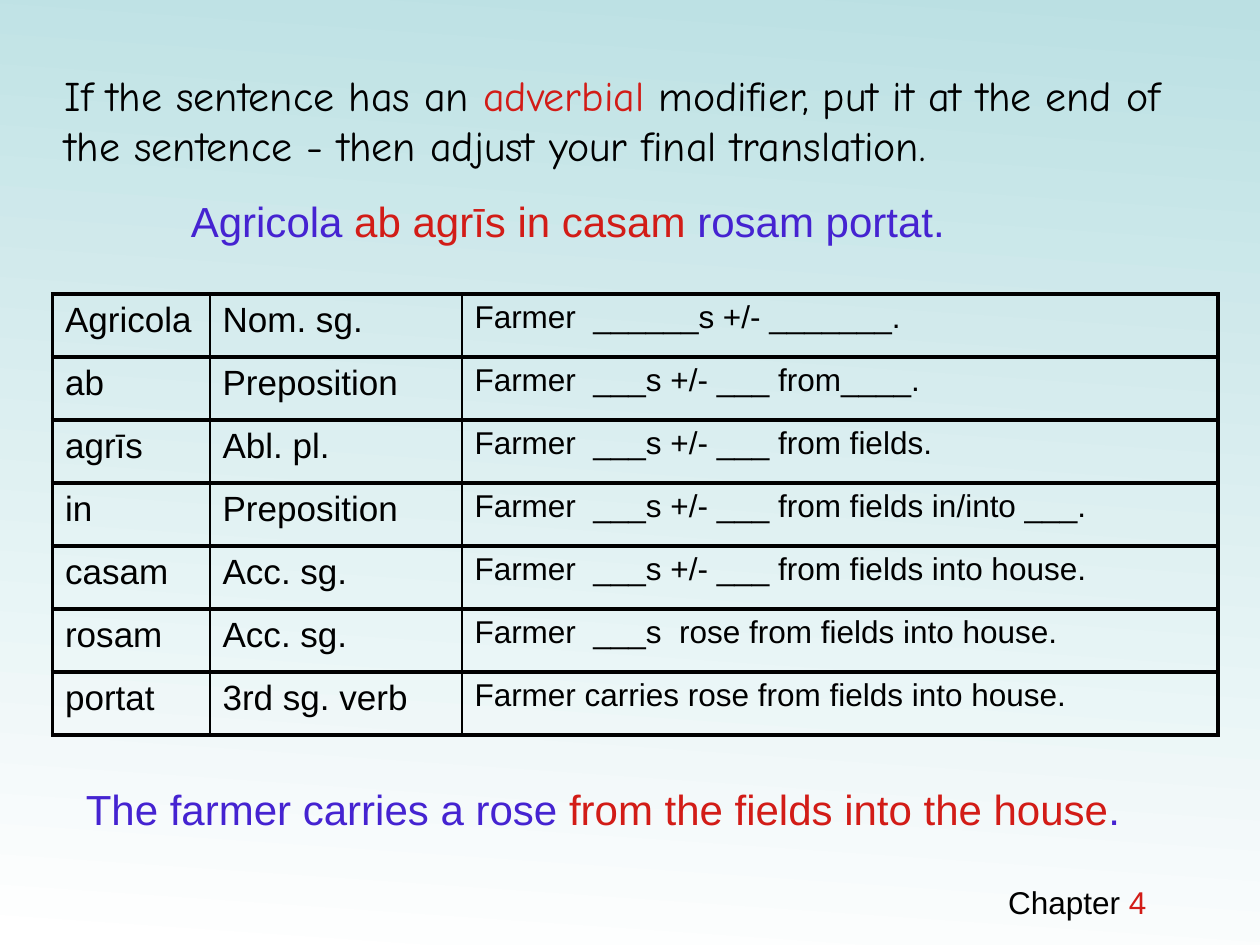
from dataclasses import dataclass

from lxml import etree
from pptx import Presentation
from pptx.dml.color import RGBColor
from pptx.enum.text import MSO_AUTO_SIZE
from pptx.oxml.ns import qn
from pptx.util import Pt

GROW = MSO_AUTO_SIZE.SHAPE_TO_FIT_TEXT


@dataclass(frozen=True)
class Theme:
    black: str = "000000"
    red: str = "D21C17"
    blue: str = "4523D1"
    sky: str = "BBE0E3"
    white: str = "FFFFFF"
    body_font: str = "Arial"
    rule_font: str = "Comic Neue"
    sentence_size: float = 24
    word_size: float = 20
    small_size: float = 18
    thick: float = 2.25
    thin: float = 1


@dataclass(frozen=True)
class TextBox:
    left: float
    top: float
    width: float
    height: float
    phrases: tuple[tuple[str, str], ...]
    size: float
    font: str
    wrap: bool = True


@dataclass(frozen=True)
class ParsedWord:
    latin: str
    grammar: str
    translation: str


THEME = Theme()
TABLE_LEFT, TABLE_TOP, ROW_HEIGHT = 30, 168, 36
COLUMN_WIDTHS = (90, 144, 432)
COLUMN_SIZES = (THEME.word_size, THEME.word_size, THEME.small_size)

TEXT_BOXES = (
    TextBox(30, 36, 654, 74, (
        ("If the sentence has an ", THEME.black),
        ("adverbial", THEME.red),
        (" modifier, put it at the end of the sentence - then adjust your "
         "final translation.", THEME.black),
    ), THEME.sentence_size, THEME.rule_font),
    TextBox(102, 108, 454, 36, (
        ("Agricola ", THEME.blue),
        ("ab agrīs in casam", THEME.red),
        (" rosam portat.", THEME.blue),
    ), THEME.sentence_size, THEME.body_font),
    TextBox(42, 444, 648, 36, (
        ("The farmer carries a rose ", THEME.blue),
        ("from the fields into the house", THEME.red),
        (".", THEME.blue),
    ), THEME.sentence_size, THEME.body_font),
    TextBox(569, 501, 93.6, 29, (
        ("Chapter ", THEME.black),
        ("4", THEME.red),
    ), THEME.small_size, THEME.body_font, wrap=False),
)

WORDS = (
    ParsedWord("Agricola", "Nom. sg.", "Farmer  ______s +/- _______."),
    ParsedWord("ab", "Preposition", "Farmer  ___s +/- ___ from____."),
    ParsedWord("agrīs", "Abl. pl.", "Farmer  ___s +/- ___ from fields."),
    ParsedWord("in", "Preposition", "Farmer  ___s +/- ___ from fields in/into ___."),
    ParsedWord("casam", "Acc. sg.", "Farmer  ___s +/- ___ from fields into house."),
    ParsedWord("rosam", "Acc. sg.", "Farmer  ___s  rose from fields into house."),
    ParsedWord("portat", "3rd sg. verb", "Farmer carries rose from fields into house."),
)


def style_run(r, size: float, color: str, font: str) -> None:
    r.font.size = Pt(size)
    r.font.name = font
    r.font.color.rgb = RGBColor.from_string(color)


def paint_background(s) -> None:
    fill = s.background.fill
    fill.gradient()
    fill.gradient_angle = 86
    for stop, color in zip(fill.gradient_stops, (THEME.white, THEME.sky)):
        stop.color.rgb = RGBColor.from_string(color)


def add_text_box(s, box: TextBox) -> None:
    sp = s.shapes.add_textbox(Pt(box.left), Pt(box.top), Pt(box.width), Pt(box.height))
    tf = sp.text_frame
    tf.word_wrap = box.wrap
    tf.auto_size = GROW
    for text, color in box.phrases:
        r = tf.paragraphs[0].add_run()
        r.text = text
        style_run(r, box.size, color, box.font)


def set_borders(cell, left: float, right: float) -> None:
    """Draw all four edges; the top and bottom are always thick."""
    edges = {"a:lnL": left, "a:lnR": right, "a:lnT": THEME.thick, "a:lnB": THEME.thick}
    tc_pr = cell._tc.get_or_add_tcPr()
    for tag, width in edges.items():
        ln = etree.SubElement(tc_pr, qn(tag), w=str(Pt(width)))
        fill = etree.SubElement(ln, qn("a:solidFill"))
        etree.SubElement(fill, qn("a:srgbClr"), val=THEME.black)


def set_relative_space_before(p, percent: int) -> None:
    spacing = etree.SubElement(p._p.get_or_add_pPr(), qn("a:spcBef"))
    etree.SubElement(spacing, qn("a:spcPct"), val=str(percent * 1000))


def add_word_table(s, word: ParsedWord, top: float) -> None:
    """Add a one-row table, so that each word can be shown on its own."""
    table = s.shapes.add_table(1, len(COLUMN_WIDTHS), Pt(TABLE_LEFT), Pt(top),
                               Pt(sum(COLUMN_WIDTHS)), Pt(ROW_HEIGHT)).table
    table.first_row = False
    table.horz_banding = False
    last = len(COLUMN_WIDTHS) - 1
    texts = (word.latin, word.grammar, word.translation)
    for i, (text, width, size) in enumerate(zip(texts, COLUMN_WIDTHS, COLUMN_SIZES)):
        table.columns[i].width = Pt(width)
        cell = table.cell(0, i)
        set_borders(cell, THEME.thick if i == 0 else THEME.thin,
                    THEME.thick if i == last else THEME.thin)
        cell.fill.background()
        p = cell.text_frame.paragraphs[0]
        p.text = text
        set_relative_space_before(p, 20)
        style_run(p.runs[0], size, THEME.black, THEME.body_font)


def main() -> None:
    prs = Presentation()
    prs.slide_width, prs.slide_height = Pt(720), Pt(540)
    s = prs.slides.add_slide(prs.slide_layouts[6])
    paint_background(s)
    for box in TEXT_BOXES:
        add_text_box(s, box)
    for i, word in enumerate(WORDS):
        add_word_table(s, word, TABLE_TOP + i * ROW_HEIGHT)
    prs.save("out.pptx")


if __name__ == "__main__":
    main()
